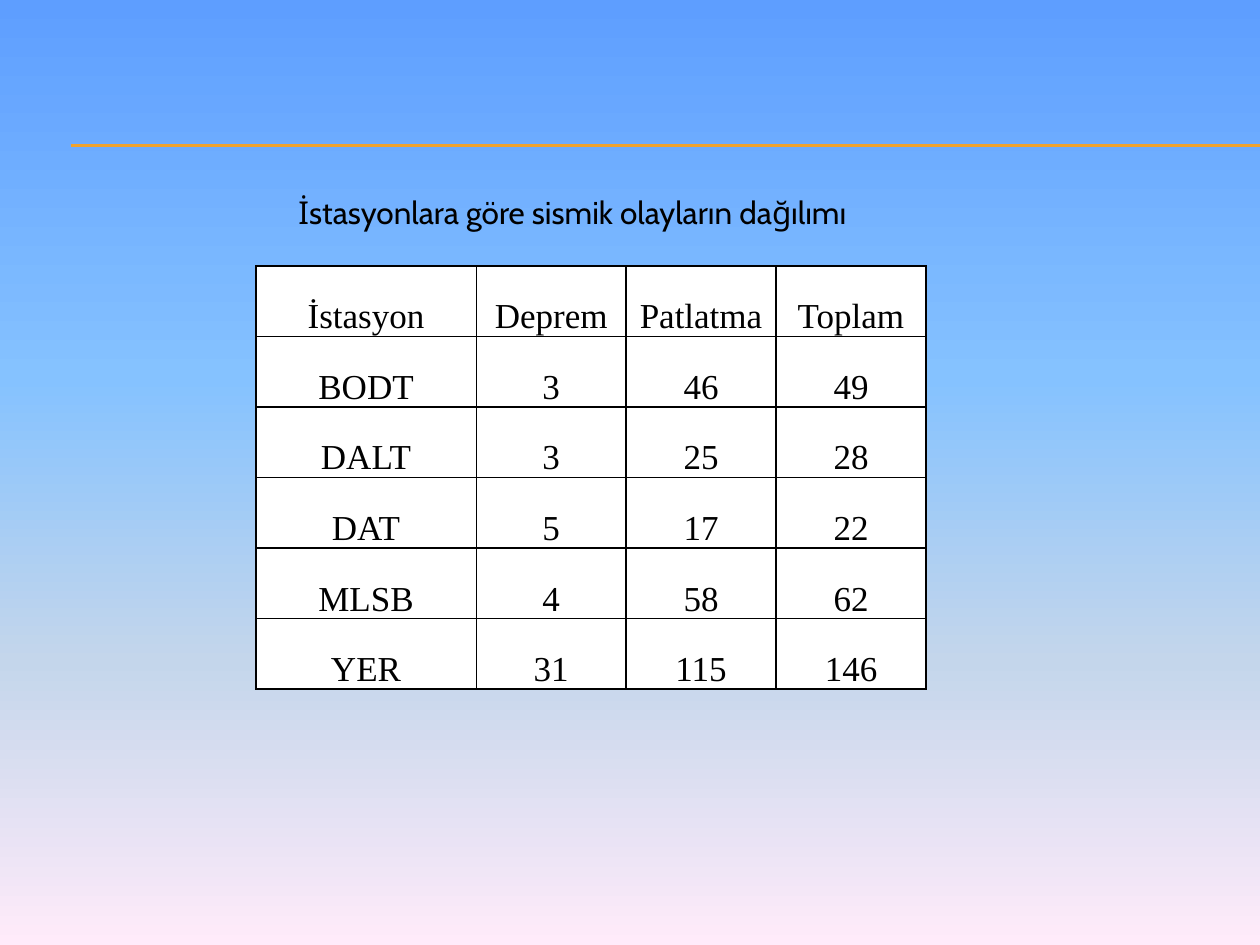
"""Build a slide with a table of seismic events by station."""
from lxml import etree
from pptx import Presentation
from pptx.dml.color import RGBColor
from pptx.enum.shapes import MSO_CONNECTOR
from pptx.enum.text import MSO_ANCHOR, MSO_AUTO_SIZE, PP_ALIGN
from pptx.oxml.ns import qn
from pptx.util import Inches, Pt

STRAIGHT = MSO_CONNECTOR.STRAIGHT
BOTTOM = MSO_ANCHOR.BOTTOM
FIT_SHAPE = MSO_AUTO_SIZE.SHAPE_TO_FIT_TEXT
LEFT, CENTER = PP_ALIGN.LEFT, PP_ALIGN.CENTER

COLORS = {"ink": "000000", "cell": "FFFFFF", "rule": "F0A22E"}
GRADIENT = [(0, "5E9EFF"), (40, "85C2FF"), (70, "C4D6EB"), (100, "FFEBFA")]
CAPTION = "İstasyonlara göre sismik olayların dağılımı"
ROWS = [
    ("İstasyon", "Deprem", "Patlatma", "Toplam"),
    ("BODT", 3, 46, 49),
    ("DALT", 3, 25, 28),
    ("DAT", 5, 17, 22),
    ("MLSB", 4, 58, 62),
    ("YER", 31, 115, 146),
]
COLUMN_WIDTHS = [1.75, 1.19, 1.19, 1.19]
ROW_HEIGHT = 0.56
RULE_LEFT, RULE_RIGHT = 0.56, 10
RULE_TOPS = [1.15, 1.16]


def write(frame, text, font, size, align=LEFT, spacing=None):
    para = frame.paragraphs[0]
    para.alignment = align
    para.line_spacing = spacing
    span = para.add_run()
    span.text = str(text)
    span.font.name = font
    span.font.size = Pt(size)
    span.font.bold = False
    span.font.color.rgb = RGBColor.from_string(COLORS["ink"])


def paint_background(page):
    fill = page.background.fill
    fill.gradient()
    fill.gradient_angle = 270
    stops = next(page.element.iter(qn("a:gsLst")))
    for stop in list(stops):
        stops.remove(stop)
    for percent, color in GRADIENT:
        stop = etree.SubElement(stops, qn("a:gs"), pos=str(percent * 1000))
        etree.SubElement(stop, qn("a:srgbClr"), val=color)


def add_rule(page, top):
    rule = page.shapes.add_connector(
        STRAIGHT, Inches(RULE_LEFT), Inches(top), Inches(RULE_RIGHT), Inches(top))
    rule.line.color.rgb = RGBColor.from_string(COLORS["rule"])
    rule.line.width = Pt(0.75)
    etree.SubElement(rule.element.spPr, qn("a:effectLst"))


def style_cell(cell):
    cell.vertical_anchor = BOTTOM
    cell.margin_left = cell.margin_right = Inches(0.05)
    cell.margin_top = cell.margin_bottom = 0
    properties = cell._tc.get_or_add_tcPr()
    for side in ("lnL", "lnR", "lnT", "lnB"):
        border = etree.SubElement(properties, qn(f"a:{side}"), w=str(Pt(1)))
        paint = etree.SubElement(border, qn("a:solidFill"))
        etree.SubElement(paint, qn("a:srgbClr"), val=COLORS["ink"])
    cell.fill.solid()
    cell.fill.fore_color.rgb = RGBColor.from_string(COLORS["cell"])


def add_station_table(page):
    table = page.shapes.add_table(
        len(ROWS), len(COLUMN_WIDTHS), Inches(2.03), Inches(2.11),
        Inches(sum(COLUMN_WIDTHS)), Inches(ROW_HEIGHT * len(ROWS))).table
    table.first_row = table.horz_banding = False
    for column, width in zip(table.columns, COLUMN_WIDTHS):
        column.width = Inches(width)
    for row, values in zip(table.rows, ROWS):
        row.height = Inches(ROW_HEIGHT)
        for cell, value in zip(row.cells, values):
            style_cell(cell)
            write(cell.text_frame, value, "Times New Roman", 20, CENTER, 1.15)


def add_caption(page):
    box = page.shapes.add_textbox(Inches(2.27), Inches(1.48), Inches(4.61), Inches(0.4))
    box.text_frame.word_wrap = False
    box.text_frame.auto_size = FIT_SHAPE
    write(box.text_frame, CAPTION, "Cabin", 18)


def main():
    deck = Presentation()
    deck.slide_width, deck.slide_height = Inches(10), Inches(7.5)
    page = deck.slides.add_slide(deck.slide_layouts[6])
    paint_background(page)
    for top in RULE_TOPS:
        add_rule(page, top)
    add_station_table(page)
    add_caption(page)
    deck.save("out.pptx")


if __name__ == "__main__":
    main()
